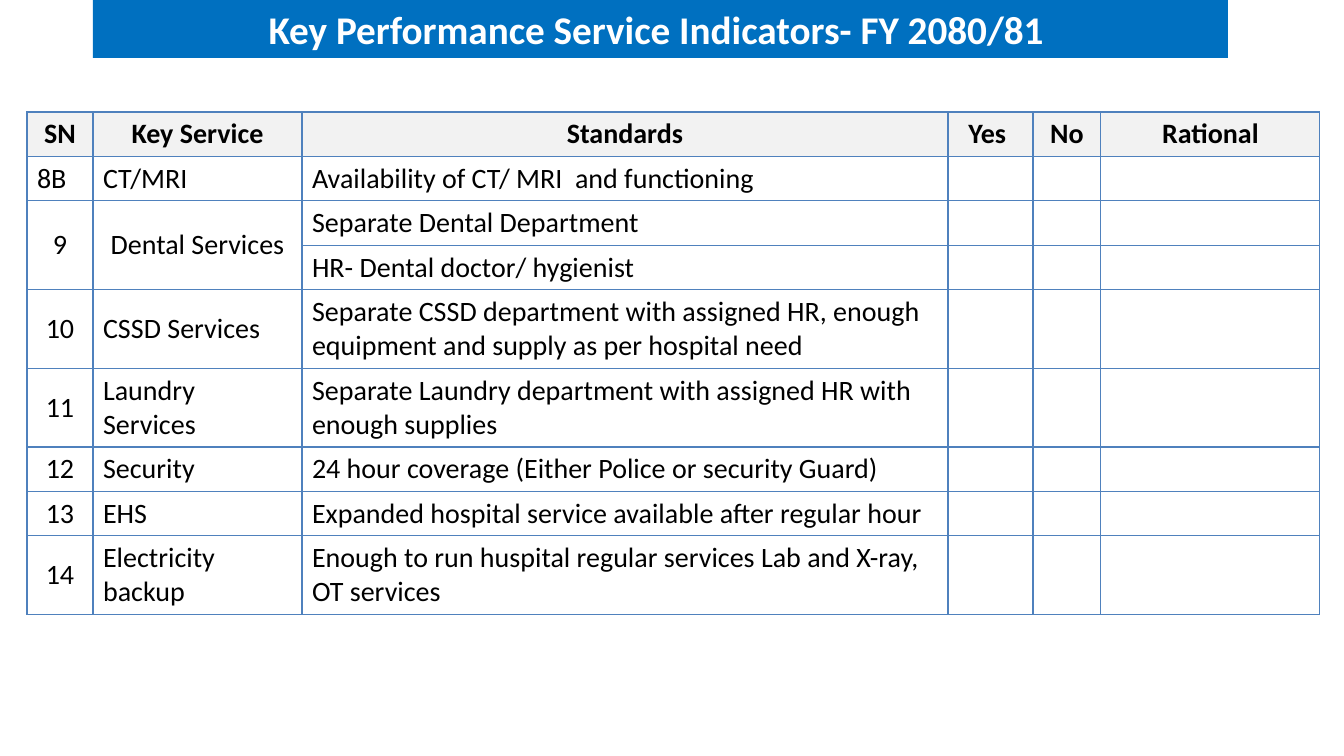
from dataclasses import dataclass

from lxml import etree
from pptx import Presentation
from pptx.dml.color import RGBColor
from pptx.enum.text import MSO_ANCHOR, MSO_AUTO_SIZE, PP_ALIGN
from pptx.oxml.ns import qn
from pptx.util import Emu, Pt

CENTER, LEFT = PP_ALIGN.CENTER, PP_ALIGN.LEFT
MIDDLE, TOP = MSO_ANCHOR.MIDDLE, MSO_ANCHOR.TOP
NO_AUTOFIT = MSO_AUTO_SIZE.NONE
SLIDE_WIDTH, SLIDE_HEIGHT = 1344, 756
EMU_PER_PX = 12192000 / SLIDE_WIDTH
TITLE_ONLY_LAYOUT = 5


@dataclass(frozen=True)
class Theme:
    font: str = "Calibri"
    title_size: int = 28
    table_size: int = 20
    banner: str = "0070C0"
    banner_text: str = "FFFFFF"
    text: str = "000000"
    header_fill: str = "F2F2F2"
    border: str = "4F81BD"
    border_width: int = 1


THEME = Theme()

TITLE = "Key Performance Service Indicators- FY 2080/81 "
COLUMN_WIDTHS = [66, 209, 646, 85, 68, 219]
ONE_LINE, TWO_LINES = 44, 77
HEADERS = ["SN", "Key Service", "Standards", "Yes ", "No", "Rational"]
INDICATORS = [
    ("8B", "CT/MRI", "Availability of CT/ MRI  and functioning", ONE_LINE),
    ("9", "Dental Services", "Separate Dental Department", ONE_LINE),
    ("", "", "HR- Dental doctor/ hygienist", ONE_LINE),
    ("10", "CSSD Services",
     "Separate CSSD department with assigned HR, enough equipment and supply as per hospital need",
     TWO_LINES),
    ("11", "Laundry Services",
     "Separate Laundry department with assigned HR with enough supplies", TWO_LINES),
    ("12", "Security", "24 hour coverage (Either Police or security Guard)", ONE_LINE),
    ("13", "EHS", "Expanded hospital service available after regular hour", ONE_LINE),
    ("14", "Electricity backup",
     "Enough to run huspital regular services Lab and X-ray, OT services", TWO_LINES),
]
DENTAL_ROW = 2


def px(length):
    return Emu(round(length * EMU_PER_PX))


def format_text(text_frame, size, color, bold, alignment):
    paragraph = text_frame.paragraphs[0]
    paragraph.alignment = alignment
    for item in (paragraph, *paragraph.runs):
        item.font.name = THEME.font
        item.font.size = Pt(size)
        item.font.bold = bold
        item.font.color.rgb = RGBColor.from_string(color)


def add_banner_title(slide, left, top, width, height):
    title = slide.shapes.title
    title.left, title.top, title.width, title.height = map(px, (left, top, width, height))
    title.fill.solid()
    title.fill.fore_color.rgb = RGBColor.from_string(THEME.banner)
    text_frame = title.text_frame
    text_frame.text = TITLE
    text_frame.word_wrap = True
    text_frame.auto_size = NO_AUTOFIT
    text_frame.vertical_anchor = MIDDLE
    format_text(text_frame, THEME.title_size, THEME.banner_text, True, CENTER)


def set_borders(cell):
    """Draw all four sides; call before setting the fill, which must follow the lines."""
    properties = cell._tc.get_or_add_tcPr()
    for side in ("a:lnL", "a:lnR", "a:lnT", "a:lnB"):
        line = etree.SubElement(properties, qn(side), w=str(Pt(THEME.border_width)))
        fill = etree.SubElement(line, qn("a:solidFill"))
        etree.SubElement(fill, qn("a:srgbClr"), val=THEME.border)


def fill_cell(cell, text, alignment, header):
    set_borders(cell)
    if header:
        cell.fill.solid()
        cell.fill.fore_color.rgb = RGBColor.from_string(THEME.header_fill)
    else:
        cell.fill.background()
    cell.vertical_anchor = TOP if text == "8B" else MIDDLE
    cell.text_frame.text = text
    format_text(cell.text_frame, THEME.table_size, THEME.text, header, alignment)


def cell_alignment(row, column, text):
    centered = row == 0 or text == "Dental Services" or (column == 0 and text != "8B")
    return CENTER if centered else LEFT


def add_indicator_table(slide, left, top):
    rows = [HEADERS] + [[*texts, "", "", ""] for *texts, _ in INDICATORS]
    heights = [ONE_LINE] + [indicator[-1] for indicator in INDICATORS]
    frame = slide.shapes.add_table(len(rows), len(HEADERS), px(left), px(top),
                                   px(sum(COLUMN_WIDTHS)), px(sum(heights)))
    table = frame.table
    table.first_row = table.horz_banding = False
    for column, width in zip(table.columns, COLUMN_WIDTHS):
        column.width = px(width)
    for row, height in zip(table.rows, heights):
        row.height = px(height)
    for row, texts in enumerate(rows):
        for column, text in enumerate(texts):
            fill_cell(table.cell(row, column), text,
                      cell_alignment(row, column, text), row == 0)
    for column in (0, 1):
        table.cell(DENTAL_ROW, column).merge(table.cell(DENTAL_ROW + 1, column))


def main():
    presentation = Presentation()
    presentation.slide_width = px(SLIDE_WIDTH)
    presentation.slide_height = px(SLIDE_HEIGHT)
    slide = presentation.slides.add_slide(presentation.slide_layouts[TITLE_ONLY_LAYOUT])
    add_banner_title(slide, 93, 0, 1135, 58)
    add_indicator_table(slide, 27, 112)
    presentation.save("out.pptx")


if __name__ == "__main__":
    main()
